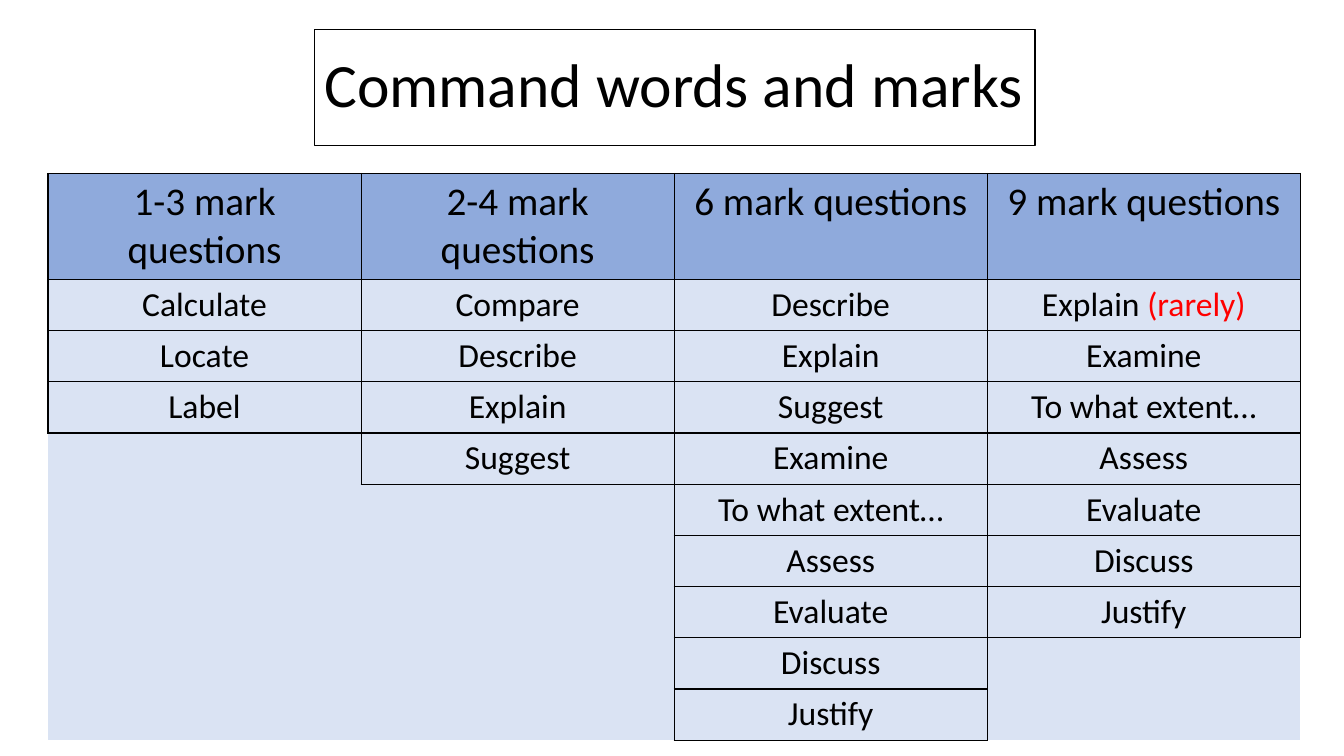
"""Build the slide of exam command words grouped by question marks."""
from dataclasses import dataclass

from lxml.etree import SubElement
from pptx import Presentation
from pptx.dml.color import RGBColor as Rgb
from pptx.enum.text import MSO_ANCHOR as Anchor, MSO_AUTO_SIZE as AutoSize, PP_ALIGN as Align
from pptx.oxml.ns import qn
from pptx.slide import Slide
from pptx.table import _Cell as Cell
from pptx.text.text import _Paragraph as Paragraph
from pptx.util import Cm, Pt


@dataclass(frozen=True)
class Theme:
    font: str = "Calibri"
    title_size: int = 44
    heading_size: int = 28
    word_size: int = 24
    ink: str = "000000"
    paper: str = "FFFFFF"
    note: str = "FF0000"
    heading_fill: str = "8FAADC"
    word_fill: str = "DAE3F3"
    line_width: int = 1


@dataclass(frozen=True)
class MarkBand:
    heading: str
    words: tuple[str, ...]
    notes: tuple[str, ...] = ()


THEME = Theme()
BANDS = (
    MarkBand("1-3 mark questions", ("Calculate", "Locate", "Label")),
    MarkBand("2-4 mark questions", ("Compare", "Describe", "Explain", "Suggest")),
    MarkBand("6 mark questions", ("Describe", "Explain", "Suggest", "Examine", "To what extent…",
                                  "Assess", "Evaluate", "Discuss", "Justify")),
    MarkBand("9 mark questions", ("Explain ", "Examine", "To what extent…", "Assess",
                                  "Evaluate", "Discuss", "Justify"), ("(rarely)",)),
)
EDGES = {"a:lnL": (0, -1), "a:lnR": (0, 1), "a:lnT": (-1, 0), "a:lnB": (1, 0)}


def write(paragraph: Paragraph, text: str, *, size: int, color: str = THEME.ink,
          align: Align = Align.CENTER) -> None:
    paragraph.alignment = align
    run = paragraph.add_run()
    run.text = text
    run.font.name = THEME.font
    run.font.size = Pt(size)
    run.font.bold = False
    run.font.color.rgb = Rgb.from_string(color)


def is_filled(row: int, column: int) -> bool:
    return 0 <= column < len(BANDS) and 0 <= row <= len(BANDS[column].words)


def draw_borders(cell: Cell, row: int, column: int) -> None:
    properties = cell._tc.get_or_add_tcPr()
    for tag, (down, across) in EDGES.items():
        edge = SubElement(properties, qn(tag), w=str(Pt(THEME.line_width)))
        if is_filled(row, column) or is_filled(row + down, column + across):
            ink = SubElement(edge, qn("a:solidFill"))
            SubElement(ink, qn("a:srgbClr"), val=THEME.ink)
        else:
            SubElement(edge, qn("a:noFill"))


def draw_title(slide: Slide) -> None:
    title = slide.shapes.title
    title.left, title.top, title.width, title.height = Cm(7.92), Cm(0.74), Cm(18.16), Cm(2.92)
    title.fill.solid()
    title.fill.fore_color.rgb = Rgb.from_string(THEME.paper)
    title.line.color.rgb = Rgb.from_string(THEME.ink)
    title.line.width = Pt(THEME.line_width)
    frame = title.text_frame
    frame.auto_size = AutoSize.NONE
    frame.word_wrap = True
    frame.vertical_anchor = Anchor.MIDDLE
    heading = frame.paragraphs[0]
    heading.line_spacing = 0.9
    write(heading, "Command words and marks", size=THEME.title_size, align=Align.LEFT)


def draw_marks_table(slide: Slide) -> None:
    row_count = 1 + max(len(band.words) for band in BANDS)
    heading_height, word_height, column_width = Cm(2.67), Cm(1.29), Cm(7.89)
    marks = slide.shapes.add_table(
        row_count, len(BANDS), Cm(1.21), Cm(4.37), column_width * len(BANDS),
        heading_height + word_height * (row_count - 1)).table
    for row, table_row in enumerate(marks.rows):
        table_row.height = word_height if row else heading_height
    for column, band in enumerate(BANDS):
        marks.columns[column].width = column_width
        for row in range(row_count):
            cell = marks.cell(row, column)
            draw_borders(cell, row, column)
            cell.fill.solid()
            cell.fill.fore_color.rgb = Rgb.from_string(
                THEME.word_fill if row else THEME.heading_fill)
            entry = cell.text_frame.paragraphs[0]
            if row == 0:
                write(entry, band.heading, size=THEME.heading_size)
            elif is_filled(row, column):
                write(entry, band.words[row - 1], size=THEME.word_size)
                for note in band.notes[row - 1:row]:
                    write(entry, note, size=THEME.word_size, color=THEME.note)


def main() -> None:
    deck = Presentation()
    deck.slide_width, deck.slide_height = Cm(33.87), Cm(19.05)
    slide = deck.slides.add_slide(deck.slide_layouts[5])
    draw_title(slide)
    draw_marks_table(slide)
    deck.save("out.pptx")


if __name__ == "__main__":
    main()
